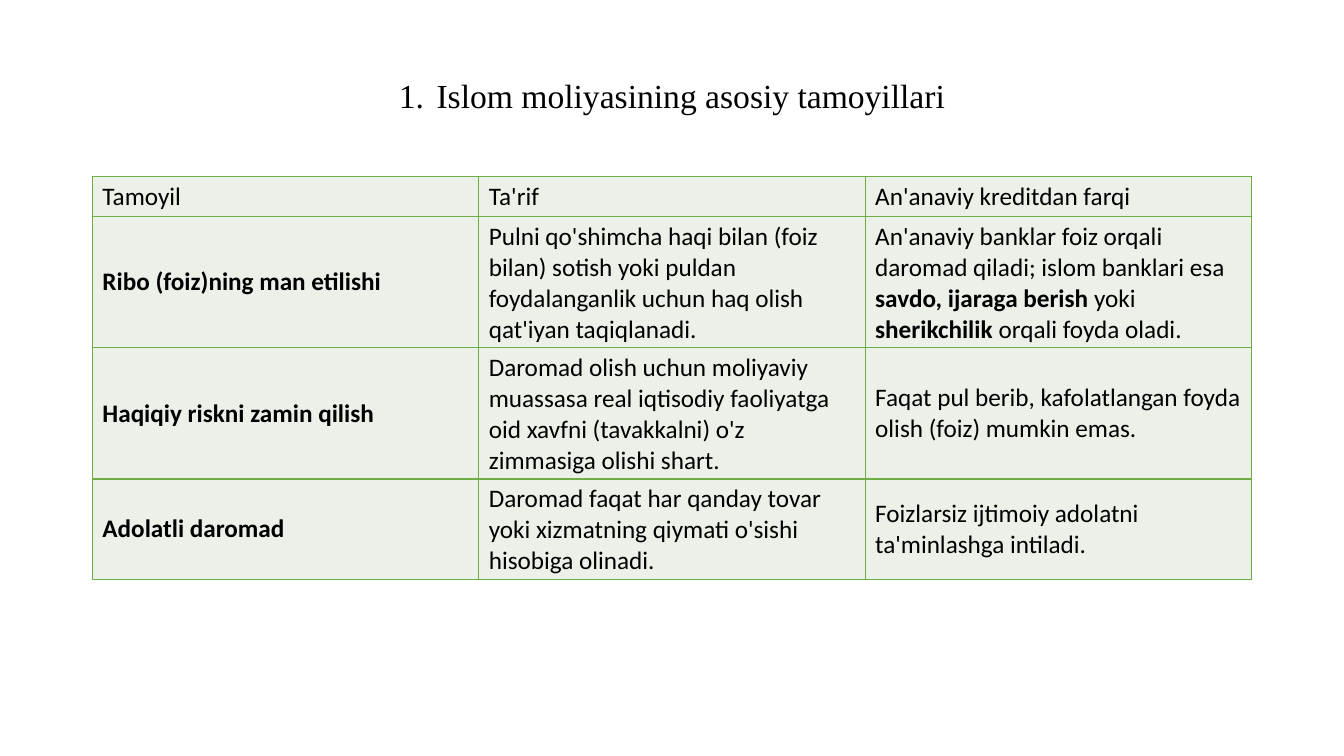
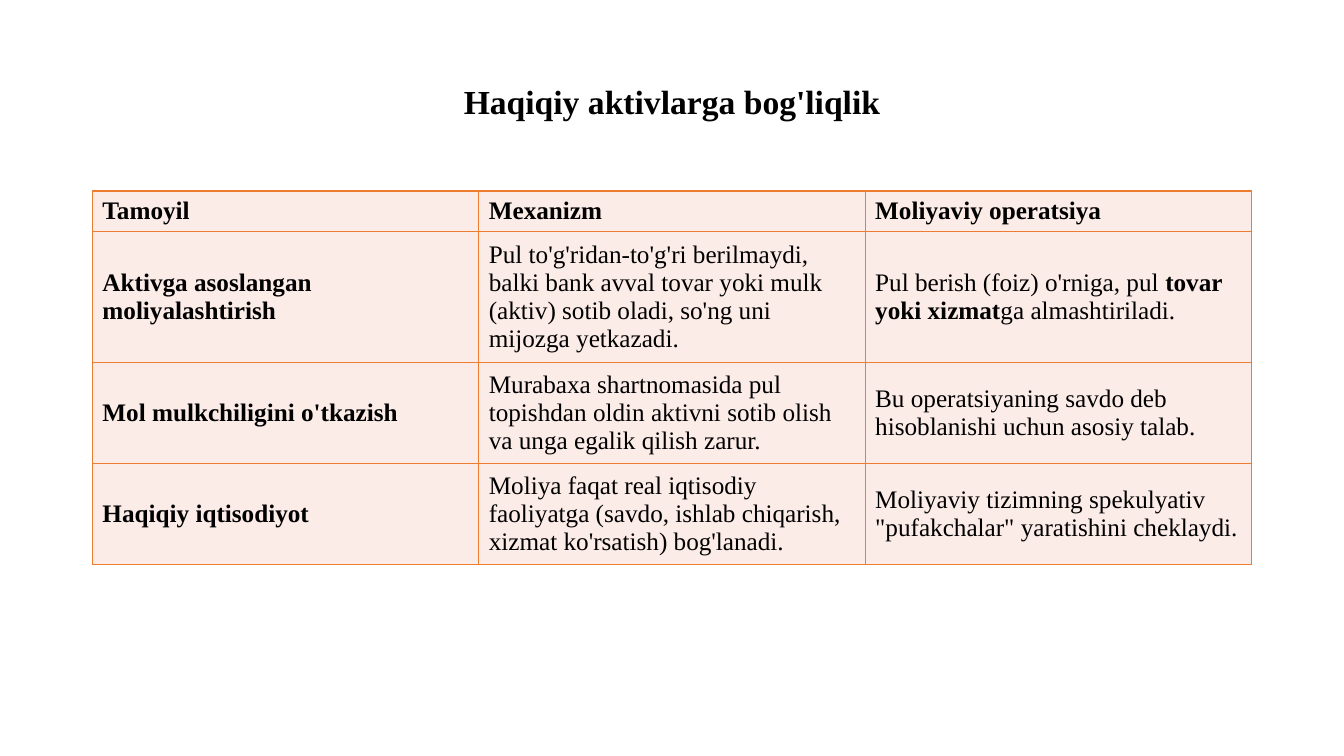
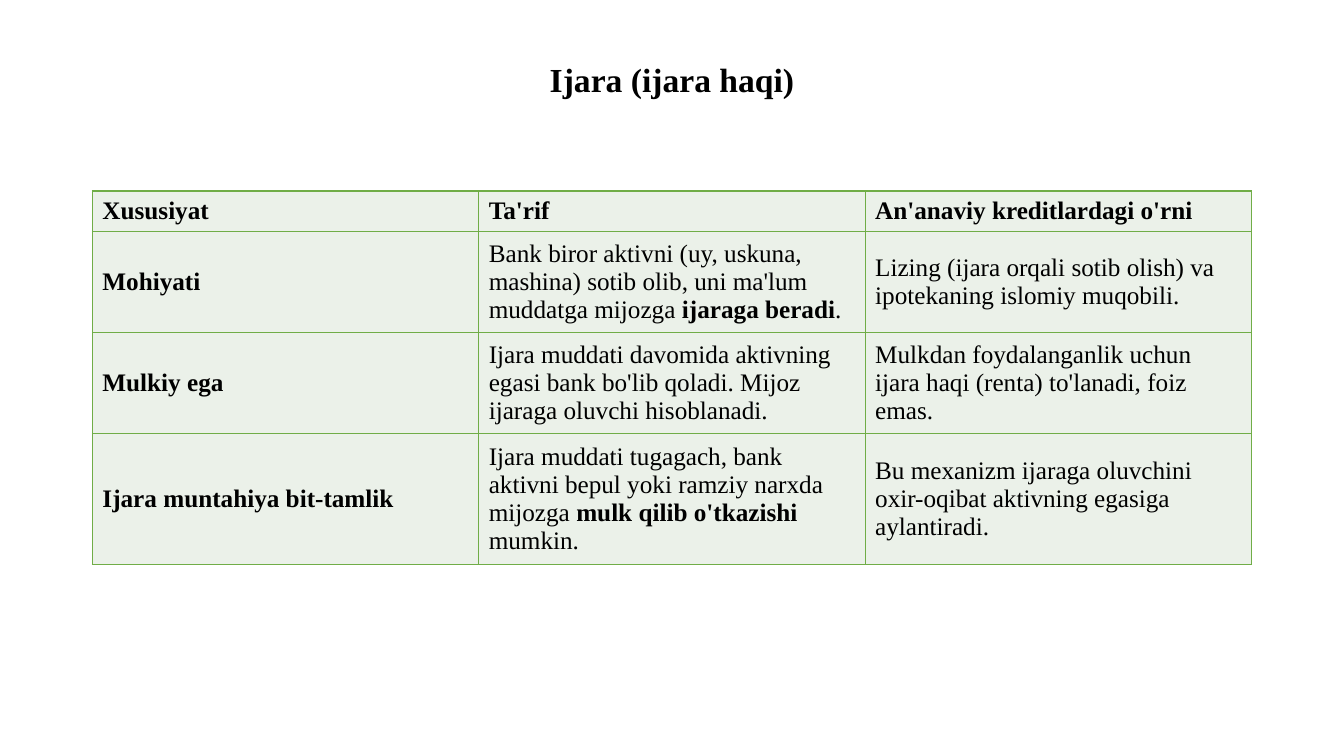
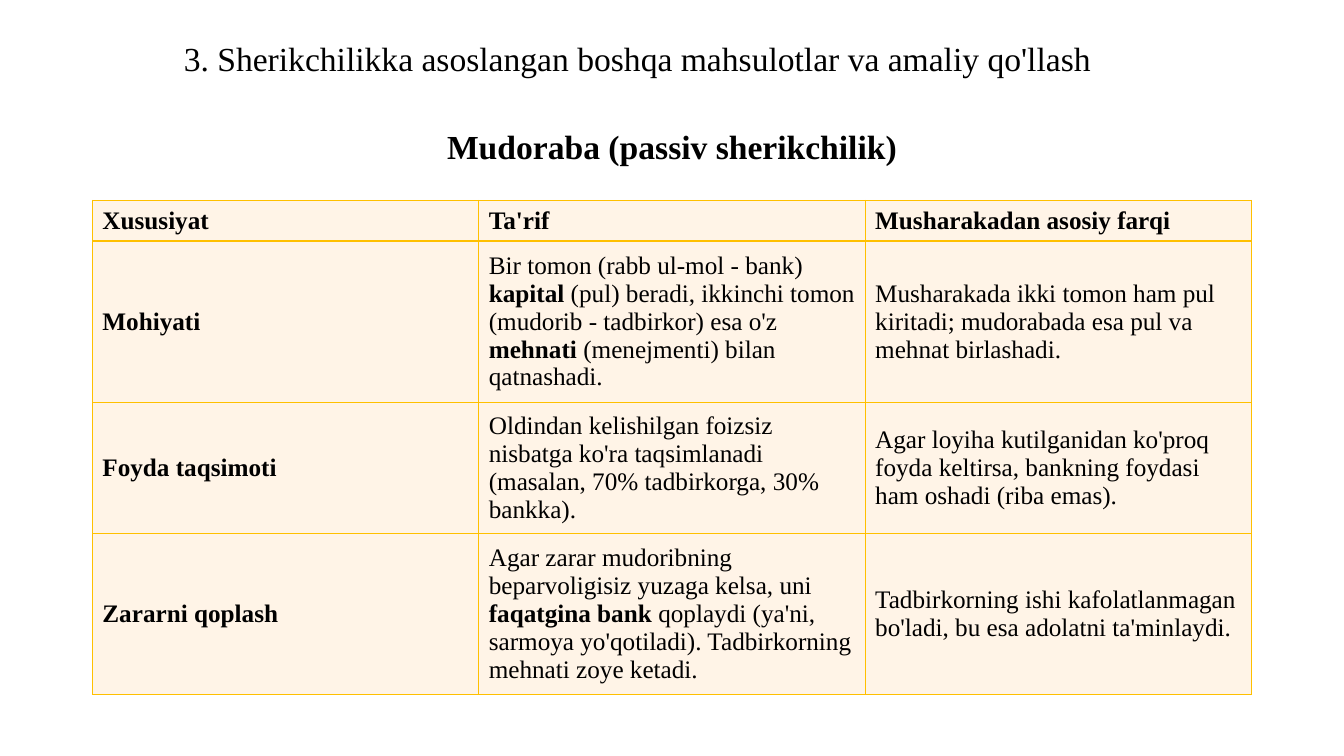
from lxml.etree import SubElement as Sub
from pptx import Presentation
from pptx.dml.color import RGBColor as Rgb
from pptx.enum.text import MSO_ANCHOR as Anchor, MSO_AUTO_SIZE as Auto, PP_ALIGN as Align
from pptx.oxml.ns import qn
from pptx.util import Pt

SCALE = 9525  # EMU in one px
SERIF, SANS = "Times New Roman", "Calibri"
BLACK = "000000"
GREEN = ("EBF1E9", "70AD47")  # fill, border
ORANGE = ("FCECE8", "ED7D31")
GOLD = ("FFF4E7", "FFC000")
COL, LEFT = 368, 88  # table column width and left edge


def px(n):
    return n * SCALE


def rgb(code):
    return Rgb.from_string(code)


def put(obj, vals):
    for key, val in vals.items():
        setattr(obj, key, val)


def write(para, text, face, size, bold=False):
    """Add runs; parts between asterisks are bold."""
    for i, part in enumerate(text.split("*")):
        if part:
            run = para.add_run()
            run.text = part
            put(run.font, {"name": face, "size": Pt(size), "bold": bold or i % 2 == 1})
            run.font.color.rgb = rgb(BLACK)
    last = Sub(para._p, qn("a:endParaRPr"), sz=str(size * 100))
    Sub(last, qn("a:latin"), typeface=face)


# Headings
def head(shape, box, text, bold=False, align=Align.CENTER):
    """Place a heading; bold ones are centred on one line without padding."""
    put(shape, dict(zip(("left", "top", "width", "height"), map(px, box))))
    pad = 0 if bold else px(5)
    frame = shape.text_frame
    put(frame, {
        "word_wrap": not bold, "auto_size": Auto.SHAPE_TO_FIT_TEXT,
        "vertical_anchor": Anchor.MIDDLE if bold else Anchor.TOP,
        "margin_left": px(10), "margin_right": px(10),
        "margin_top": pad, "margin_bottom": pad,
    })
    para = frame.paragraphs[0]
    para.alignment = align
    write(para, text, SERIF, 24, bold)
    return para


def number(para):
    """Number the paragraph with a hanging indent."""
    props = para._p.get_or_add_pPr()
    props.set("marL", "342900")
    props.set("indent", "-342900")
    Sub(props, qn("a:buFont"), typeface=SERIF)
    Sub(props, qn("a:buAutoNum"), type="arabicPeriod")


# Tables
def edge(cell, code):
    """Draw a 1 pt border on all four sides."""
    props = cell._tc.get_or_add_tcPr()
    for side in ("lnL", "lnR", "lnT", "lnB"):
        line = Sub(props, qn("a:" + side), w=str(Pt(1)))
        fill = Sub(line, qn("a:solidFill"))
        Sub(fill, qn("a:srgbClr"), val=code)


def grid(slide, top, high, rows, look, face=SERIF, strong=True):
    """Place a table whose first column, and header if strong, is bold."""
    fill, line = look
    wide = len(rows[0])
    frame = slide.shapes.add_table(len(rows), wide, px(LEFT), px(top),
                                   px(COL * wide), px(high))
    table = frame.table
    put(table, {"first_row": False, "horz_banding": False})
    for r, row in enumerate(rows):
        table.rows[r].height = 0  # rows grow to fit their text
        for c, text in enumerate(row):
            cell = table.cell(r, c)
            cell.vertical_anchor = Anchor.MIDDLE
            edge(cell, line)
            cell.fill.solid()
            cell.fill.fore_color.rgb = rgb(fill)
            bold = strong if r == 0 else c == 0
            write(cell.text_frame.paragraphs[0], text, face, 18, bold)
    frame.height = px(high)


# Slides
def start(deck):
    return deck.slides.add_slide(deck.slide_layouts[5])


def rules(deck):
    slide = start(deck)
    number(head(slide.shapes.title, (320, 66, 640, 48),
                "Islom moliyasining asosiy tamoyillari"))
    grid(slide, 168, 384, (
        ("Tamoyil", "Ta'rif", "An'anaviy kreditdan farqi"),
        ("Ribo (foiz)ning man etilishi",
         "Pulni qo'shimcha haqi bilan (foiz bilan) sotish yoki puldan "
         "foydalanganlik uchun haq olish qat'iyan taqiqlanadi.",
         "An'anaviy banklar foiz orqali daromad qiladi; islom banklari esa "
         "*savdo, ijaraga berish *yoki *sherikchilik *orqali foyda oladi."),
        ("Haqiqiy riskni zamin qilish",
         "Daromad olish uchun moliyaviy muassasa real iqtisodiy faoliyatga "
         "oid xavfni (tavakkalni) o'z zimmasiga olishi shart.",
         "Faqat pul berib, kafolatlangan foyda olish (foiz) mumkin emas."),
        ("Adolatli daromad",
         "Daromad faqat har qanday tovar yoki xizmatning qiymati o'sishi "
         "hisobiga olinadi.",
         "Foizlarsiz ijtimoiy adolatni ta'minlashga intiladi."),
    ), GREEN, SANS, strong=False)


def assets(deck):
    slide = start(deck)
    head(slide.shapes.title, (430, 77, 420, 38),
         "Haqiqiy aktivlarga bog'liqlik", bold=True)
    grid(slide, 182, 355, (
        ("Tamoyil", "Mexanizm", "Moliyaviy operatsiya"),
        ("Aktivga asoslangan moliyalashtirish",
         "Pul to'g'ridan-to'g'ri berilmaydi, balki bank avval tovar yoki mulk "
         "(aktiv) sotib oladi, so'ng uni mijozga yetkazadi.",
         "Pul berish (foiz) o'rniga, pul *tovar yoki xizmat*ga almashtiriladi."),
        ("Mol mulkchiligini o'tkazish",
         "Murabaxa shartnomasida pul topishdan oldin aktivni sotib olish va "
         "unga egalik qilish zarur.",
         "Bu operatsiyaning savdo deb hisoblanishi uchun asosiy talab."),
        ("Haqiqiy iqtisodiyot",
         "Moliya faqat real iqtisodiy faoliyatga (savdo, ishlab chiqarish, "
         "xizmat ko'rsatish) bog'lanadi.",
         "Moliyaviy tizimning spekulyativ \"pufakchalar\" yaratishini cheklaydi."),
    ), ORANGE)


def lease(deck):
    slide = start(deck)
    head(slide.shapes.title, (513, 56, 254, 38), "Ijara (ijara haqi)", bold=True)
    grid(slide, 182, 355, (
        ("Xususiyat", "Ta'rif", "An'anaviy kreditlardagi o'rni"),
        ("Mohiyati",
         "Bank biror aktivni (uy, uskuna, mashina) sotib olib, uni ma'lum "
         "muddatga mijozga *ijaraga beradi*.",
         "Lizing (ijara orqali sotib olish) va ipotekaning islomiy muqobili."),
        ("Mulkiy ega",
         "Ijara muddati davomida aktivning egasi bank bo'lib qoladi. Mijoz "
         "ijaraga oluvchi hisoblanadi.",
         "Mulkdan foydalanganlik uchun ijara haqi (renta) to'lanadi, foiz emas."),
        ("Ijara muntahiya bit-tamlik",
         "Ijara muddati tugagach, bank aktivni bepul yoki ramziy narxda "
         "mijozga *mulk qilib o'tkazishi *mumkin.",
         "Bu mexanizm ijaraga oluvchini oxir-oqibat aktivning egasiga "
         "aylantiradi."),
    ), GREEN)


def partner(deck):
    slide = start(deck)
    head(slide.shapes.title, (165, 31, 949, 48),
         "3. Sherikchilikka asoslangan boshqa mahsulotlar va amaliy qo'llash",
         align=Align.LEFT)
    head(slide.shapes.add_textbox(0, 0, 0, 0), (414, 120, 452, 38),
         "Mudoraba (passiv sherikchilik)", bold=True)
    grid(slide, 191, 470, (
        ("Xususiyat", "Ta'rif", "Musharakadan asosiy farqi"),
        ("Mohiyati",
         "Bir tomon (rabb ul-mol - bank) *kapital* (pul) beradi, ikkinchi "
         "tomon (mudorib - tadbirkor) esa o'z *mehnati* (menejmenti) bilan "
         "qatnashadi.",
         "Musharakada ikki tomon ham pul kiritadi; mudorabada esa pul va "
         "mehnat birlashadi."),
        ("Foyda taqsimoti",
         "Oldindan kelishilgan foizsiz nisbatga ko'ra taqsimlanadi (masalan, "
         "70% tadbirkorga, 30% bankka).",
         "Agar loyiha kutilganidan ko'proq foyda keltirsa, bankning foydasi "
         "ham oshadi (riba emas)."),
        ("Zararni qoplash",
         "Agar zarar mudoribning beparvoligisiz yuzaga kelsa, uni *faqatgina "
         "bank *qoplaydi (ya'ni, sarmoya yo'qotiladi). Tadbirkorning mehnati "
         "zoye ketadi.",
         "Tadbirkorning ishi kafolatlanmagan bo'ladi, bu esa adolatni "
         "ta'minlaydi."),
    ), GOLD)


def main():
    deck = Presentation()
    put(deck, {"slide_width": px(1280), "slide_height": px(720)})
    for build in (rules, assets, lease, partner):
        build(deck)
    deck.save("out.pptx")


if __name__ == "__main__":
    main()
